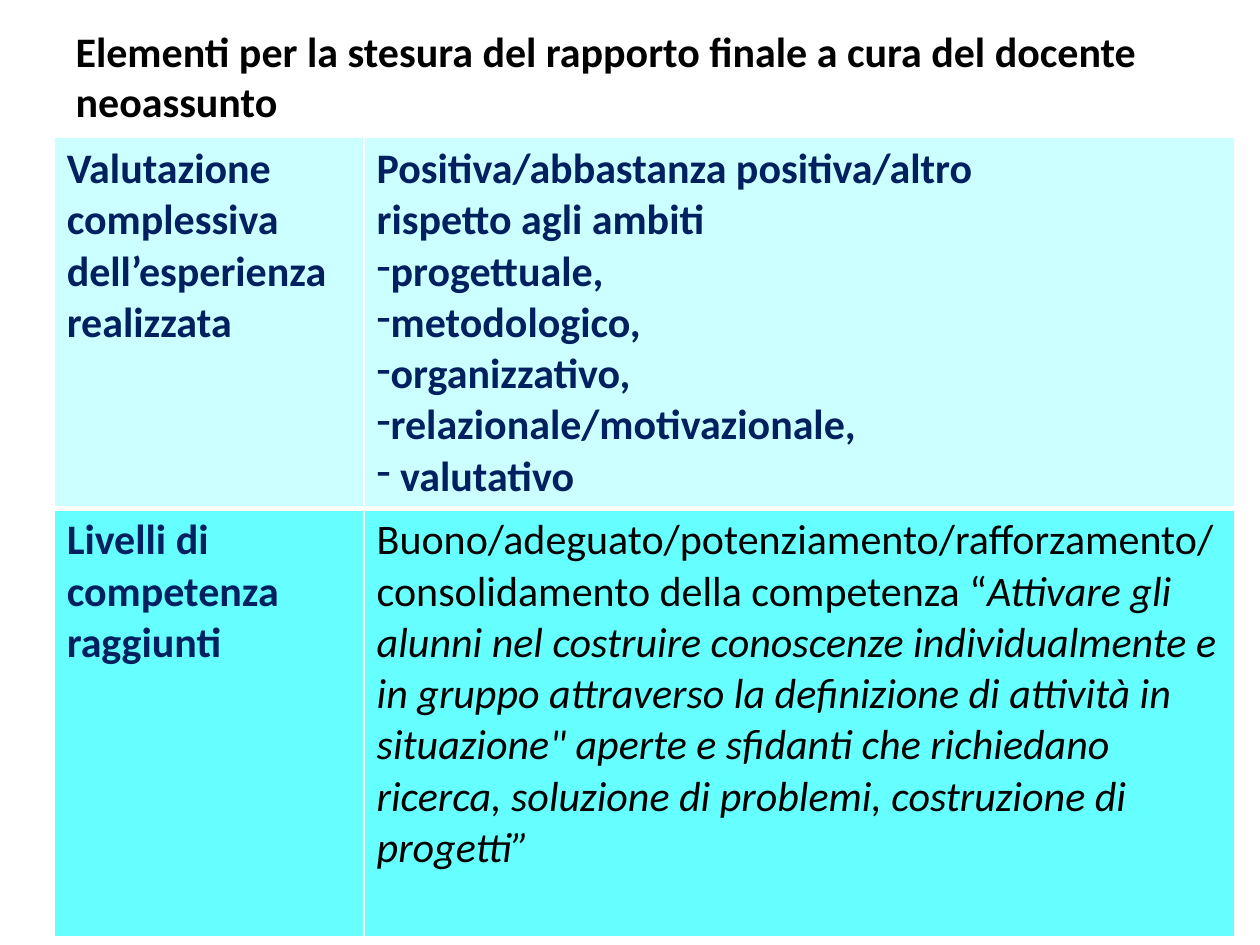
from lxml.etree import SubElement
from pptx import Presentation
from pptx.dml.color import RGBColor
from pptx.enum.text import MSO_ANCHOR, PP_ALIGN
from pptx.oxml import parse_xml
from pptx.oxml.ns import nsdecls, qn
from pptx.util import Inches, Pt

COLORS = {"navy": "002060", "black": "000000", "white": "FFFFFF",
          "pale": "CCFFFF", "aqua": "66FFFF"}
FONT = "Calibri"
TITLE = "Elementi per la stesura del rapporto finale a cura del docente neoassunto"

NAVY_BOLD = {"color": "navy", "bold": True}
PLAIN = {"color": "black", "bold": False}
ITALIC = {**PLAIN, "italic": True}

# Each paragraph is (bulleted, [(text, format), ...])
AREAS = ["progettuale,", "metodologico,", "organizzativo,",
         "relazionale/motivazionale,", " valutativo"]
ROWS = [
    {"fill": "pale", "height": 2.8, "cells": [
        [(False, [("Valutazione complessiva dell’esperienza realizzata", NAVY_BOLD)])],
        [(False, [("Positiva/abbastanza positiva/altro", NAVY_BOLD)]),
         (False, [("rispetto agli ambiti", NAVY_BOLD)])]
        + [(True, [(area, NAVY_BOLD)]) for area in AREAS],
    ]},
    {"fill": "aqua", "height": 3.4, "cells": [
        [(False, [("Livelli di competenza raggiunti", NAVY_BOLD)])],
        [(False, [("Buono/adeguato/potenziamento/rafforzamento/", PLAIN)]),
         (False, [("consolidamento della competenza “", PLAIN),
                  ("Attivare gli alunni nel costruire conoscenze individualmente e in "
                   "gruppo attraverso la definizione di attività in situazione\" aperte "
                   "e sfidanti che richiedano ricerca, soluzione di problemi, "
                   "costruzione di progetti”", ITALIC)])],
    ]},
]
COLUMN_WIDTHS = [2.46, 6.91]


def add_span(para, text, color, **formats):
    span = para.add_run()
    span.text = text
    span.font.color.rgb = RGBColor.from_string(COLORS[color])
    for name, value in {"name": FONT, "size": Pt(24), **formats}.items():
        setattr(span.font, name, value)


def add_dash(para):
    para.alignment = PP_ALIGN.JUSTIFY
    properties = para._p.get_or_add_pPr()
    properties.set("marL", "0")
    properties.set("indent", "0")
    SubElement(properties, qn("a:buFontTx"))
    SubElement(properties, qn("a:buChar")).set("char", "-")


def fill_text(frame, paragraphs):
    for index, (bulleted, spans) in enumerate(paragraphs):
        para = frame.add_paragraph() if index else frame.paragraphs[0]
        if bulleted:
            add_dash(para)
        for text, formats in spans:
            add_span(para, text, **formats)


def set_borders(cell, widths):
    """Draw white borders; widths are points by side, in L, R, T, B order."""
    properties = cell._tc.get_or_add_tcPr()
    for index, (side, width) in enumerate(widths.items()):
        properties.insert(index, parse_xml(
            f'<a:ln{side} {nsdecls("a")} w="{Pt(width)}"><a:solidFill>'
            f'<a:srgbClr val="{COLORS["white"]}"/></a:solidFill></a:ln{side}>'))


def add_title(page):
    title = page.shapes.title
    title.left, title.top, title.width, title.height = map(Inches, (0.5, 0.05, 9, 1.1))
    title.text_frame.vertical_anchor = MSO_ANCHOR.MIDDLE
    para = title.text_frame.paragraphs[0]
    para.alignment = PP_ALIGN.LEFT
    add_span(para, TITLE, "black", bold=True)


def add_report_table(page):
    height = sum(row["height"] for row in ROWS)
    table = page.shapes.add_table(
        len(ROWS), len(COLUMN_WIDTHS), Inches(0.43), Inches(1.09),
        Inches(sum(COLUMN_WIDTHS)), Inches(height)).table
    table.first_row = table.horz_banding = False
    for column, width in zip(table.columns, COLUMN_WIDTHS):
        column.width = Inches(width)
    for row_index, row in enumerate(ROWS):
        table.rows[row_index].height = Inches(row["height"])
        borders = {"L": 1, "R": 1, "T": 3 if row_index else 1, "B": 1 if row_index else 3}
        for column_index, paragraphs in enumerate(row["cells"]):
            cell = table.cell(row_index, column_index)
            cell.fill.solid()
            cell.fill.fore_color.rgb = RGBColor.from_string(COLORS[row["fill"]])
            set_borders(cell, borders)
            fill_text(cell.text_frame, paragraphs)


def main():
    deck = Presentation()
    deck.slide_width, deck.slide_height = Inches(10), Inches(7.5)
    page = deck.slides.add_slide(deck.slide_layouts[5])
    add_title(page)
    add_report_table(page)
    deck.save("out.pptx")


if __name__ == "__main__":
    main()
